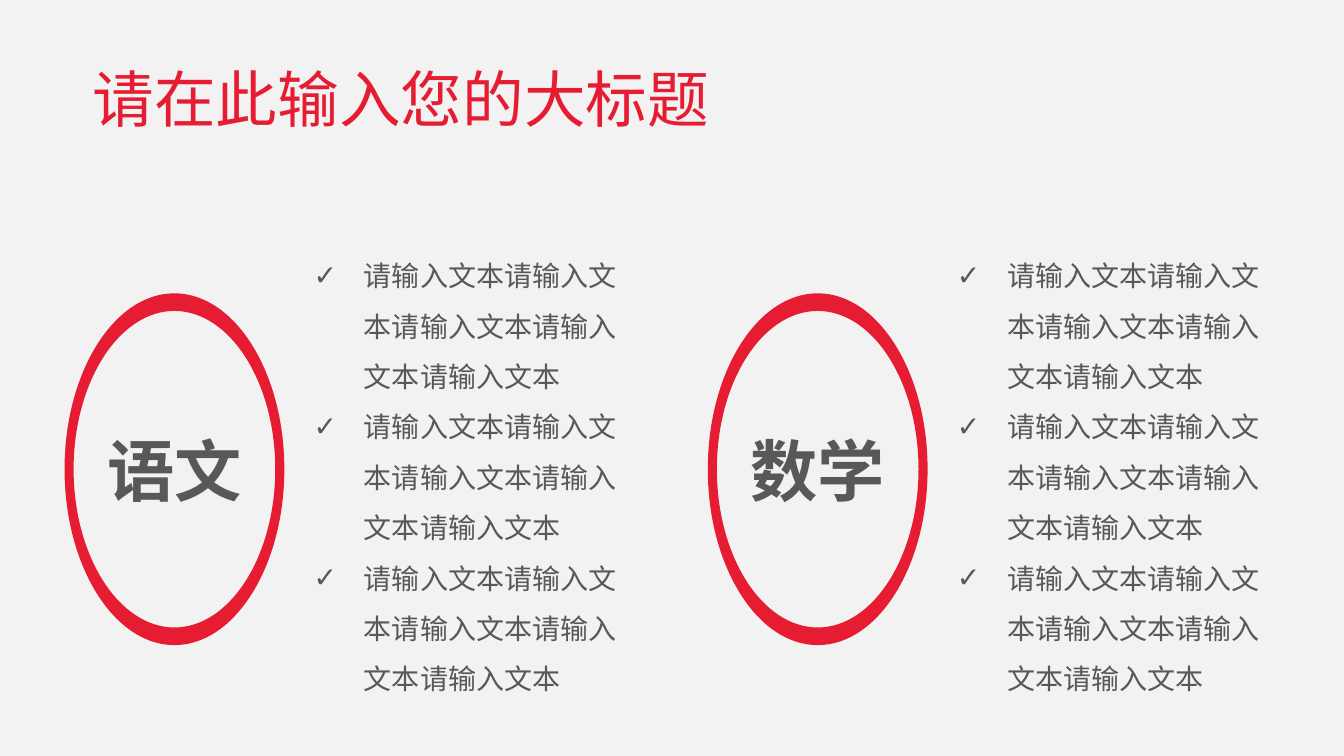
import pptx
import pptx.util
import pptx.dml.color
import pptx.enum.shapes
import pptx.enum.text
import pptx.oxml.ns
import lxml.etree

TITLE = "请在此输入您的大标题"
ITEM = "请输入文本" * 5
SUBJECTS = [("语文", [ITEM] * 3), ("数学", [ITEM] * 3)]
FONT = "Noto Sans CJK SC"
RED, GREY, PAPER = "E61C32", "585858", "F2F2F2"

WIDTH, HEIGHT = 13.33, 7.5
TITLE_BOX = (0.82, 0.18, 11.81, 1.22)
FIRST_LEFT, COLUMN_STEP = 0.64, 6.38
RING_TOP, RING_WIDTH, RING_HEIGHT = 2.91, 2.18, 3.49
HOLE_WIDTH, HOLE_HEIGHT = 2.0, 3.14
LIST_OFFSET, LIST_TOP, LIST_WIDTH, LIST_HEIGHT = 2.37, 2.11, 3.3, 5.08
LIST_INDENT = 0.5
ARC_HANDLE = 0.55

ANCHOR = pptx.enum.text.MSO_ANCHOR
ALIGN = pptx.enum.text.PP_ALIGN
qn = pptx.oxml.ns.qn


def color(value):
    return pptx.dml.color.RGBColor.from_string(value)


def place(shape, box):
    shape.left, shape.top, shape.width, shape.height = map(pptx.util.Inches, box)


def paint(shape, fill):
    shape.shadow.inherit = False
    shape.fill.solid()
    shape.fill.fore_color.rgb = color(fill)
    shape.line.fill.background()


def format_text(shape, size, text_color, anchor, align, spacing=1.0, bold=False):
    frame = shape.text_frame
    frame.word_wrap = True
    frame.auto_size = pptx.enum.text.MSO_AUTO_SIZE.NONE
    frame.vertical_anchor = anchor
    for paragraph in frame.paragraphs:
        paragraph.alignment = align
        paragraph.line_spacing = spacing
        paragraph.space_before = pptx.util.Pt(0)
        for run in paragraph.runs:
            run.font.size = pptx.util.Pt(size)
            run.font.bold = bold
            run.font.name = FONT
            run.font.color.rgb = color(text_color)
            east_asian = lxml.etree.SubElement(run.font._element, qn("a:ea"))
            east_asian.set("typeface", FONT)


def add_check_marks(shape):
    indent = pptx.util.Inches(LIST_INDENT)
    for paragraph in shape.text_frame.paragraphs:
        properties = paragraph._p.get_or_add_pPr()
        properties.set("marL", str(indent))
        properties.set("indent", str(-indent))
        bullet = lxml.etree.SubElement(properties, qn("a:buChar"))
        bullet.set("char", "✓")


def add_backdrop(slide):
    rectangle = pptx.enum.shapes.MSO_SHAPE.RECTANGLE
    backdrop = slide.shapes.add_shape(rectangle, 0, 0, pptx.util.Inches(WIDTH), pptx.util.Inches(HEIGHT))
    paint(backdrop, PAPER)
    slide.shapes._spTree.insert(2, backdrop._element)


def ellipse_corners(center_x, center_y, width, height):
    top, bottom = (center_x, center_y - height / 2), (center_x, center_y + height / 2)
    left, right = (center_x - width / 2, center_y), (center_x + width / 2, center_y)
    corners = [top, right, bottom, left, top]
    return [(pptx.util.Inches(x), pptx.util.Inches(y)) for x, y in corners]


def round_segments(shape):
    for index, segment in enumerate(list(shape._element.iter(qn("a:lnTo")))):
        start, end = segment.getprevious()[-1], segment[0]
        x0, y0, x1, y1 = (int(point.get(axis)) for point in (start, end) for axis in "xy")
        shift_x, shift_y = ARC_HANDLE * (x1 - x0), ARC_HANDLE * (y1 - y0)
        if index % 2 == 0:
            handles = [(x0 + shift_x, y0), (x1, y1 - shift_y)]
        else:
            handles = [(x0, y0 + shift_y), (x1 - shift_x, y1)]
        curve = lxml.etree.Element(qn("a:cubicBezTo"))
        for x, y in handles + [(x1, y1)]:
            point = lxml.etree.SubElement(curve, qn("a:pt"))
            point.set("x", str(round(x)))
            point.set("y", str(round(y)))
        segment.getparent().replace(segment, curve)


def add_ring(slide, left, label):
    center = (left + RING_WIDTH / 2, RING_TOP + RING_HEIGHT / 2)
    outer = ellipse_corners(*center, RING_WIDTH, RING_HEIGHT)
    inner = ellipse_corners(*center, HOLE_WIDTH, HOLE_HEIGHT)
    builder = slide.shapes.build_freeform(*outer[0])
    builder.add_line_segments(outer[1:], close=True)
    builder.move_to(*inner[0])
    builder.add_line_segments(inner[1:], close=True)
    ring = builder.convert_to_shape()
    round_segments(ring)
    paint(ring, RED)
    ring.text_frame.text = label
    format_text(ring, 48, GREY, ANCHOR.MIDDLE, ALIGN.CENTER, bold=True)


def main():
    presentation = pptx.Presentation()
    presentation.slide_width = pptx.util.Inches(WIDTH)
    presentation.slide_height = pptx.util.Inches(HEIGHT)
    slide = presentation.slides.add_slide(presentation.slide_layouts.get_by_name("Two Content"))
    title, *lists = slide.placeholders
    add_backdrop(slide)

    place(title, TITLE_BOX)
    title.text_frame.text = TITLE
    format_text(title, 44, RED, ANCHOR.BOTTOM, ALIGN.LEFT, spacing=0.9)

    for column, ((subject, items), body) in enumerate(zip(SUBJECTS, lists)):
        left = FIRST_LEFT + column * COLUMN_STEP
        add_ring(slide, left, subject)
        place(body, (left + LIST_OFFSET, LIST_TOP, LIST_WIDTH, LIST_HEIGHT))
        body.text_frame.text = "\n".join(items)
        format_text(body, 20, GREY, ANCHOR.MIDDLE, ALIGN.LEFT, spacing=1.5)
        add_check_marks(body)

    presentation.save("out.pptx")


if __name__ == "__main__":
    main()
